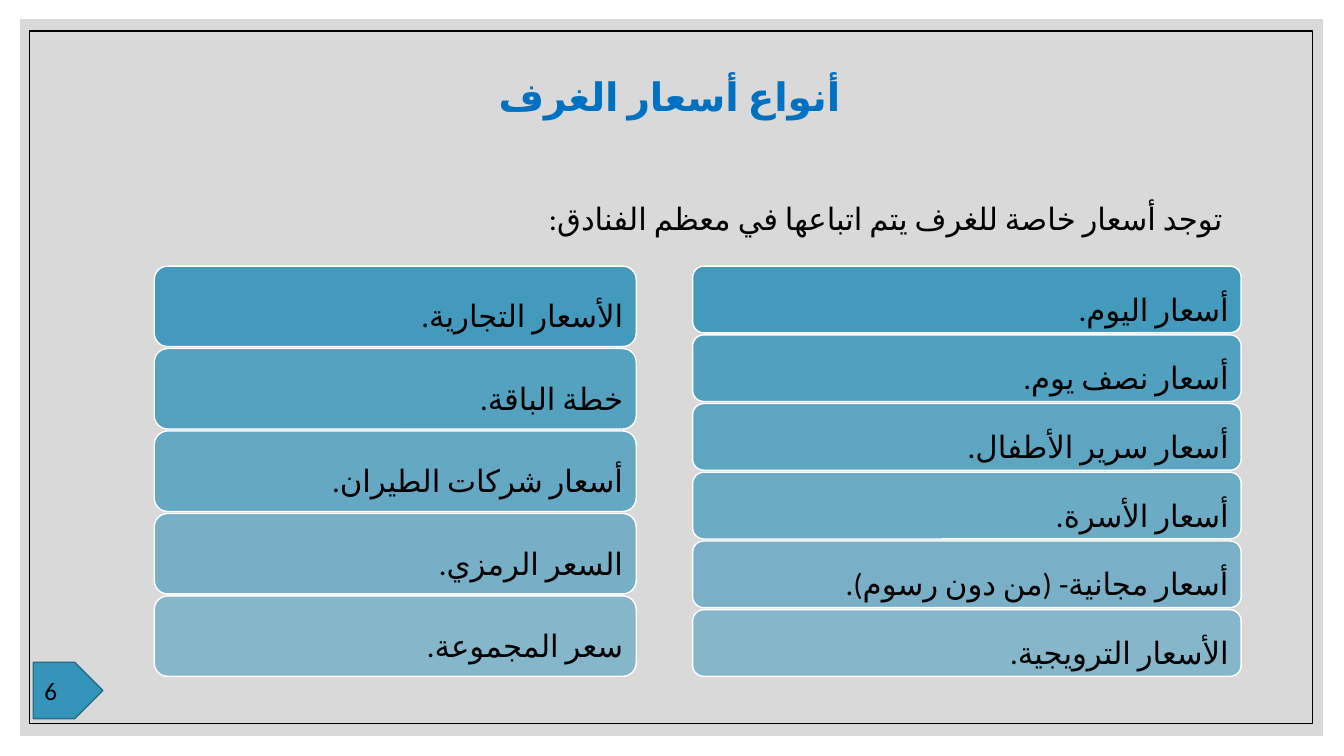
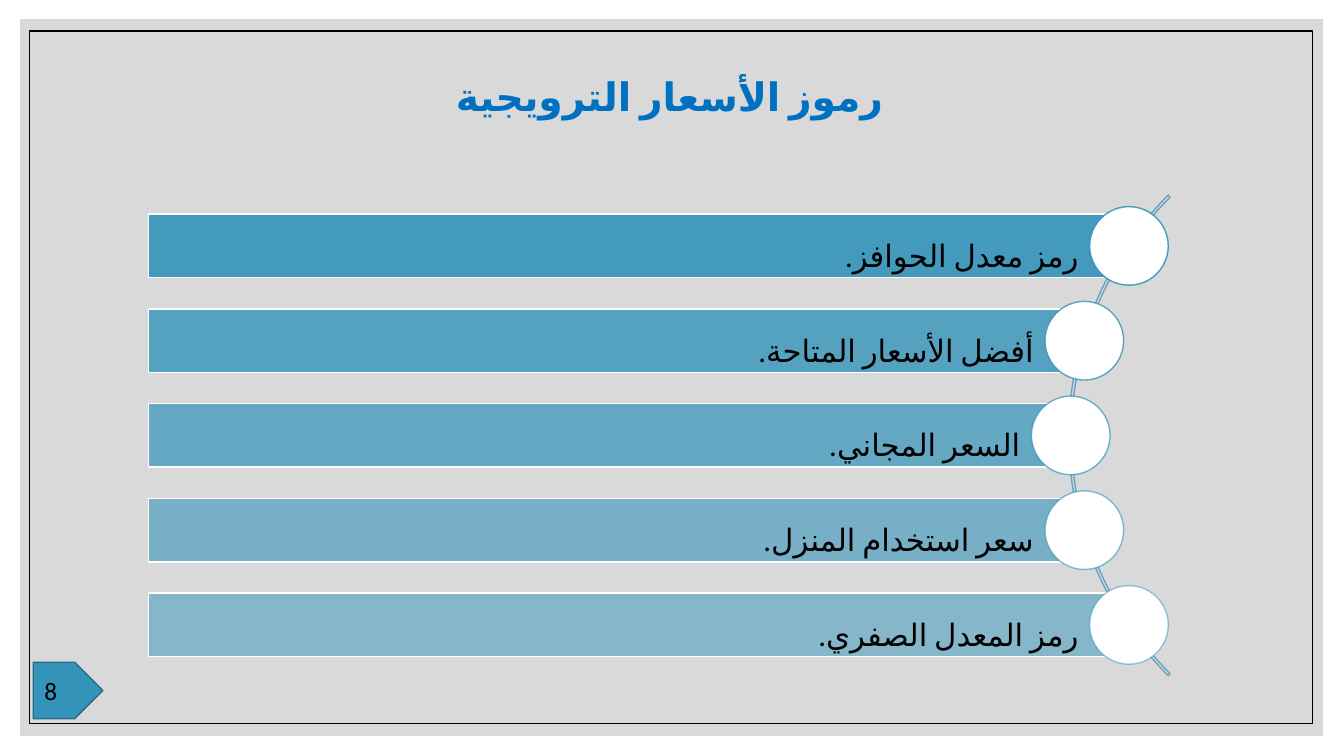
"""Build two Arabic slides on hotel room rates and promotional rate codes."""
from dataclasses import dataclass
from math import sqrt
from typing import Optional

from lxml.etree import SubElement
from pptx import Presentation
from pptx.dml.color import RGBColor
from pptx.enum.shapes import MSO_SHAPE
from pptx.enum.text import MSO_ANCHOR, PP_ALIGN
from pptx.oxml.ns import qn
from pptx.util import Inches, Pt

COLORS = {
    "panel": "D9D9D9",
    "accent": "3494BA",
    "accent_dark": "266D8A",
    "arc": "67A3C2",
    "title": "0070C0",
    "text": "000000",
    "white": "FFFFFF",
}
FONT = "Calibri"
ITEM_PARAGRAPH = {"alignment": PP_ALIGN.JUSTIFY, "line_spacing": 1.5, "space_after": Pt(7.7)}
INTRO_PARAGRAPH = {"alignment": PP_ALIGN.JUSTIFY, "line_spacing": 1.5}
TITLE_PARAGRAPH = {"alignment": PP_ALIGN.CENTER}
NUMBER_PARAGRAPH = {"alignment": PP_ALIGN.LEFT}
ITEM_FONT = {"name": FONT, "size": Pt(22)}
TITLE_FONT = {"name": FONT, "size": Pt(28), "bold": True}
NUMBER_FONT = {"name": FONT, "size": Pt(18)}


@dataclass(frozen=True)
class Box:
    left: float
    top: float
    width: float
    height: float

    def lengths(self):
        return [Inches(v) for v in (self.left, self.top, self.width, self.height)]


@dataclass(frozen=True)
class Paint:
    color: str
    alpha: Optional[float] = None


@dataclass(frozen=True)
class RateColumn:
    left: float
    width: float
    rates: tuple


WHITE = Paint("white")
COLUMN_TOP, COLUMN_HEIGHT, COLUMN_GAP = 2.64, 4.07, 0.02
RATE_COLUMNS = (
    RateColumn(6.87, 5.44, (
        "أسعار اليوم.",
        "أسعار نصف يوم.",
        "أسعار سرير الأطفال.",
        "أسعار الأسرة.",
        "أسعار مجانية- (من دون رسوم).",
        "الأسعار الترويجية.",
    )),
    RateColumn(1.53, 4.78, (
        "الأسعار التجارية.",
        "خطة الباقة.",
        "أسعار شركات الطيران.",
        "السعر الرمزي.",
        "سعر المجموعة.",
    )),
)
RATE_CODES = (
    "رمز معدل الحوافز.",
    "أفضل الأسعار المتاحة.",
    "السعر المجاني.",
    "سعر استخدام المنزل.",
    "رمز المعدل الصفري.",
)
ARC_X, ARC_Y, ARC_RADIUS = 13.97, 4.32, 3.37
BAR_LEFT, BAR_HEIGHT, BAR_PITCH, CIRCLE = 1.47, 0.63, 0.94, 0.78


def apply(target, values: dict) -> None:
    for name, value in values.items():
        setattr(target, name, value)


def paint(fill, style: Paint) -> None:
    fill.solid()
    fill.fore_color.rgb = RGBColor.from_string(COLORS[style.color])
    if style.alpha is not None:
        color = fill._xPr.find(qn("a:solidFill"))[0]
        SubElement(color, qn("a:alpha")).set("val", str(round(style.alpha * 1000)))


def add_shape(slide, kind, box: Box, fill: Optional[Paint], line: Optional[Paint]):
    s = slide.shapes.add_shape(kind, *box.lengths())
    s.shadow.inherit = False
    if fill:
        paint(s.fill, fill)
    else:
        s.fill.background()
    if line:
        s.line.width = Pt(1)
        paint(s.line.fill, line)
    else:
        s.line.fill.background()
    return s


def write(shape, text: str, paragraph: dict, font: dict, color: str = "text",
          insets=(0.1, 0.05, 0.1, 0.05), anchor=MSO_ANCHOR.MIDDLE, rtl: bool = True) -> None:
    tf = shape.text_frame
    sides = ("margin_left", "margin_top", "margin_right", "margin_bottom")
    apply(tf, {"word_wrap": True, "vertical_anchor": anchor})
    apply(tf, {side: Inches(v) for side, v in zip(sides, insets)})
    p = tf.paragraphs[0]
    apply(p, paragraph)
    r = p.add_run()
    r.text = text
    apply(r.font, font)
    r.font.color.rgb = RGBColor.from_string(COLORS[color])
    if rtl:
        p._p.get_or_add_pPr().set("rtl", "1")
        props = r._r.get_or_add_rPr()
        props.set("lang", "ar-SA")
        SubElement(props, qn("a:cs")).set("typeface", FONT)


def fade(count: int) -> list:
    return [90 - 40 * i / (count - 1) for i in range(count)]


def add_base(prs, title: str, number: str):
    slide = prs.slides.add_slide(prs.slide_layouts[6])
    add_shape(slide, MSO_SHAPE.RECTANGLE, Box(0.2, 0.19, 12.92, 7.11), Paint("panel"), None)
    add_shape(slide, MSO_SHAPE.RECTANGLE, Box(0.29, 0.31, 12.73, 6.87), None, Paint("text"))
    tag = add_shape(slide, MSO_SHAPE.PENTAGON, Box(0.33, 6.57, 0.69, 0.56),
                    Paint("accent"), Paint("accent_dark"))
    write(tag, number, NUMBER_PARAGRAPH, NUMBER_FONT, insets=(0.11, 0.05, 0, 0.05), rtl=False)
    s = slide.shapes.add_textbox(*Box(2.19, 0.47, 8.9, 0.97).lengths())
    write(s, title, TITLE_PARAGRAPH, TITLE_FONT, "title")
    return slide


def add_rate_column(slide, column: RateColumn) -> None:
    pitch = (COLUMN_HEIGHT + COLUMN_GAP) / len(column.rates)
    for i, (rate, alpha) in enumerate(zip(column.rates, fade(len(column.rates)))):
        box = Box(column.left, COLUMN_TOP + i * pitch, column.width, pitch - COLUMN_GAP)
        s = add_shape(slide, MSO_SHAPE.ROUNDED_RECTANGLE, box, Paint("accent", alpha), WHITE)
        write(s, rate, ITEM_PARAGRAPH, ITEM_FONT, insets=(0.09,) * 4)


def add_rate_codes(slide) -> None:
    arc = add_shape(slide, MSO_SHAPE.BLOCK_ARC,
                    Box(ARC_X - ARC_RADIUS, ARC_Y - ARC_RADIUS, 2 * ARC_RADIUS, 2 * ARC_RADIUS),
                    None, Paint("arc"))
    for i, value in enumerate((81, 135, 0.004)):
        arc.adjustments[i] = value
    middle = (len(RATE_CODES) - 1) / 2
    for i, (code, alpha) in enumerate(zip(RATE_CODES, fade(len(RATE_CODES)))):
        offset = (i - middle) * BAR_PITCH
        x, y = ARC_X - sqrt((ARC_RADIUS - 0.02) ** 2 - offset ** 2), ARC_Y + offset
        bar = add_shape(slide, MSO_SHAPE.RECTANGLE,
                        Box(BAR_LEFT, y - BAR_HEIGHT / 2, x - BAR_LEFT, BAR_HEIGHT),
                        Paint("accent", alpha), WHITE)
        write(bar, code, ITEM_PARAGRAPH, ITEM_FONT, insets=(0.06, 0.06, 0.5, 0.06))
        add_shape(slide, MSO_SHAPE.OVAL, Box(x - CIRCLE / 2, y - CIRCLE / 2, CIRCLE, CIRCLE),
                  WHITE, Paint("accent", alpha))


def main() -> None:
    prs = Presentation()
    prs.slide_width, prs.slide_height = Inches(13.33), Inches(7.5)

    slide = add_base(prs, "أنواع أسعار الغرف", "6")
    intro = slide.shapes.add_textbox(*Box(0.97, 1.75, 11.34, 0.89).lengths())
    write(intro, "توجد أسعار خاصة للغرف يتم اتباعها في معظم الفنادق:", INTRO_PARAGRAPH,
          ITEM_FONT, insets=(0.1, 0.05, 0.18, 0.05), anchor=MSO_ANCHOR.TOP)
    for column in RATE_COLUMNS:
        add_rate_column(slide, column)

    add_rate_codes(add_base(prs, "رموز الأسعار الترويجية", "8"))
    prs.save("out.pptx")


if __name__ == "__main__":
    main()
